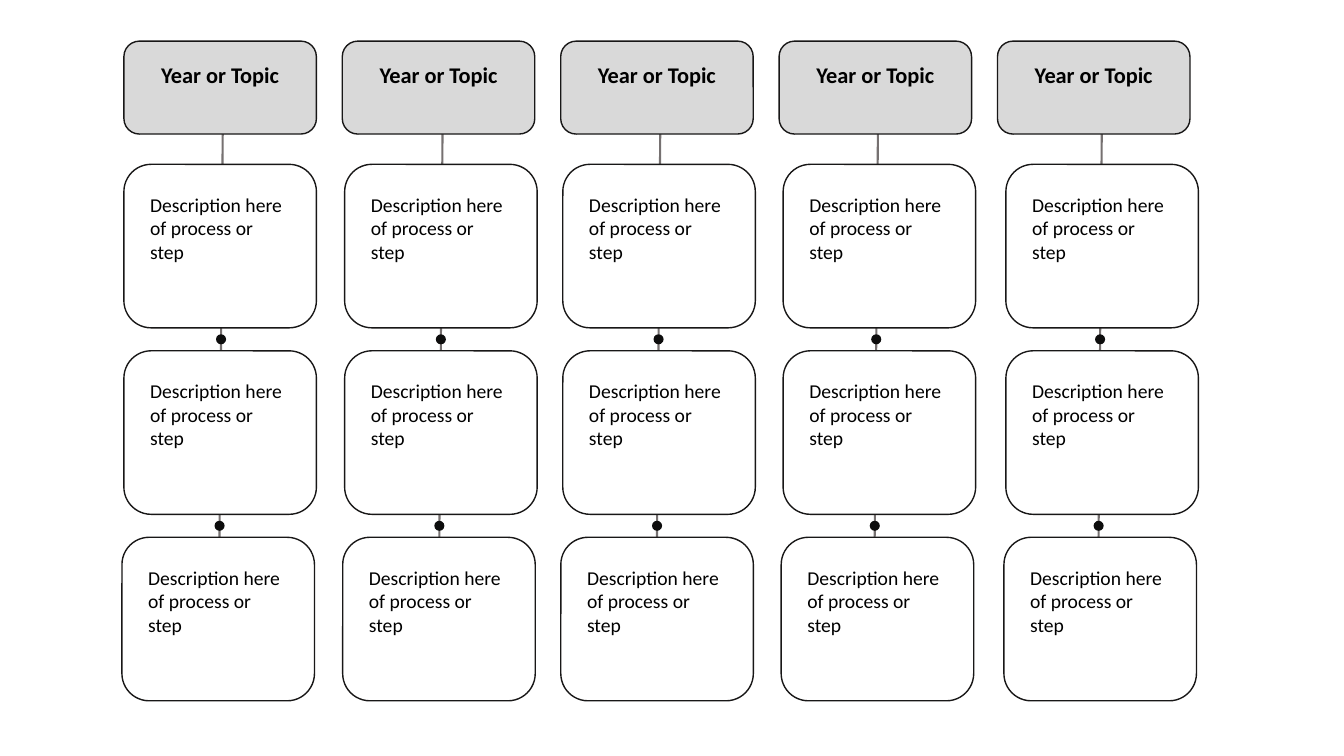
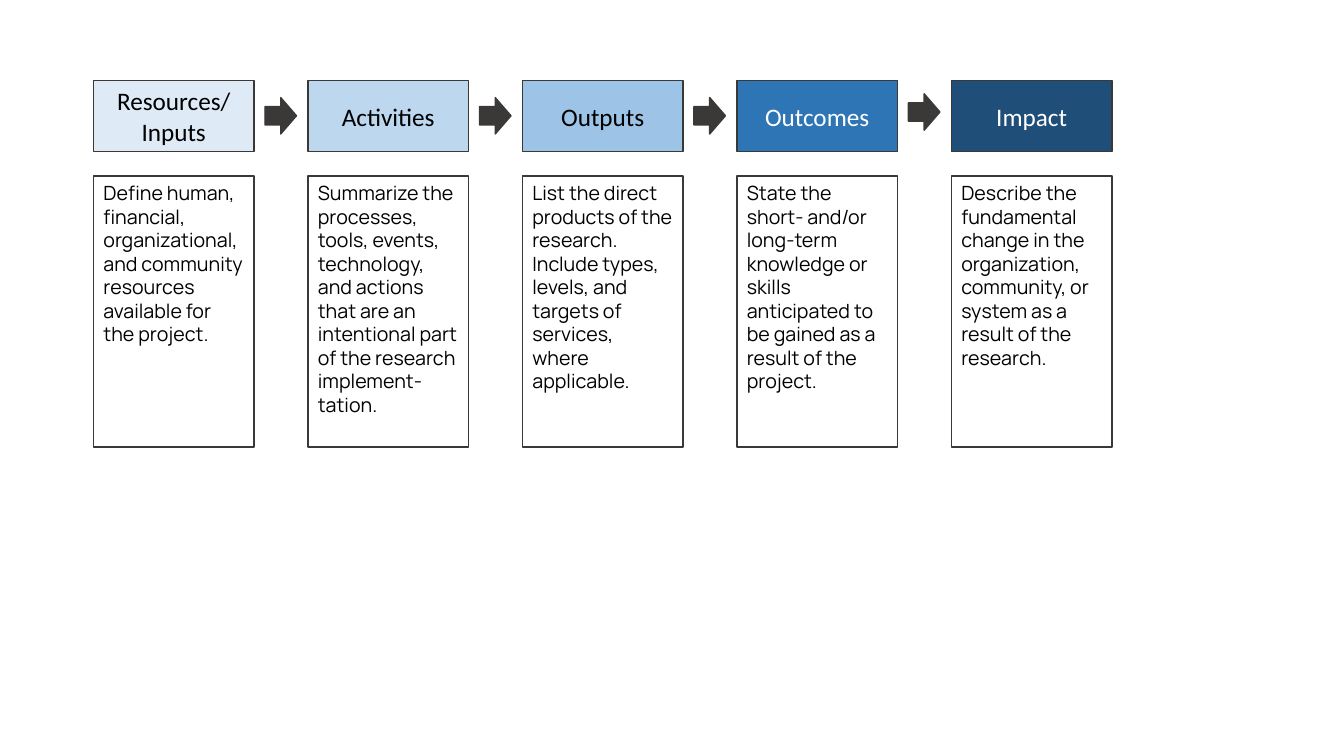
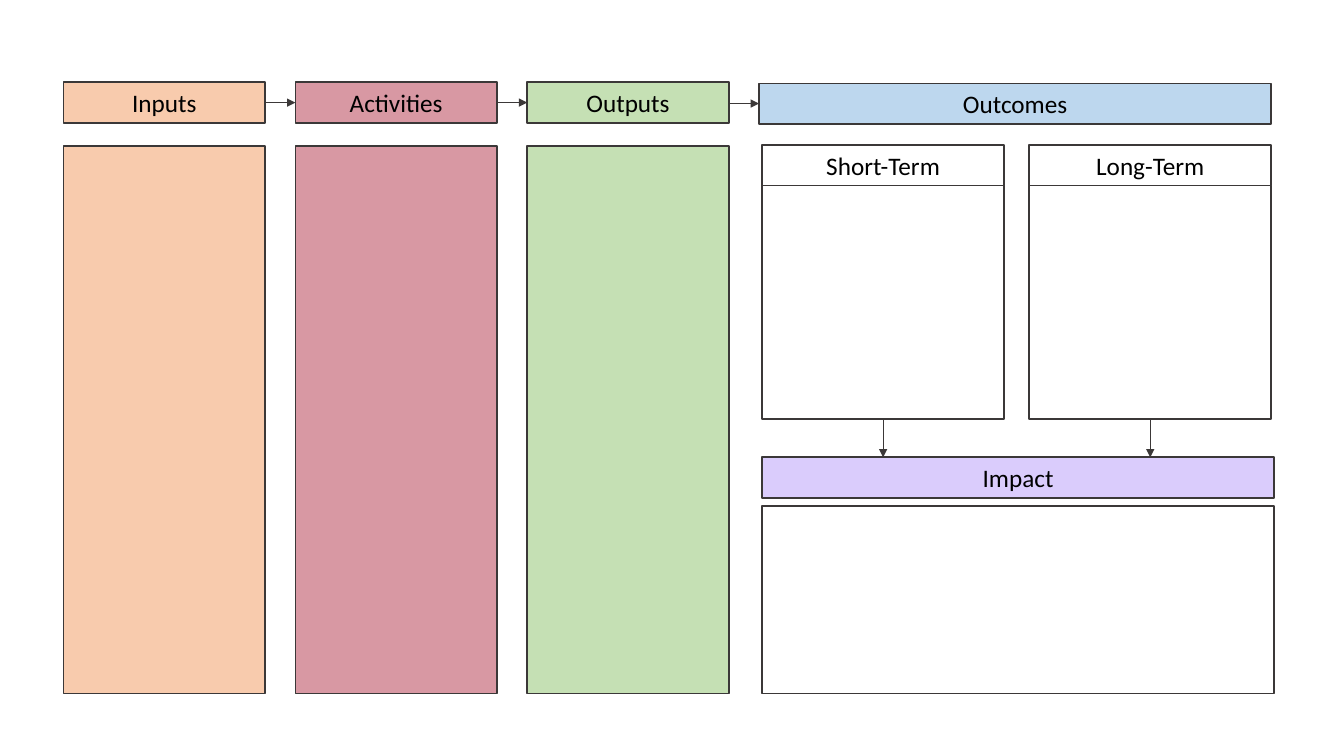
from pptx import Presentation
from pptx.dml.color import RGBColor
from pptx.enum.shapes import MSO_CONNECTOR, MSO_SHAPE
from pptx.enum.text import MSO_ANCHOR, PP_ALIGN
from pptx.oxml.ns import qn
from pptx.util import Pt
from lxml.etree import SubElement

HEX = {
    "black": "000000", "white": "FFFFFF", "ink": "181717", "dark": "3B3838",
    "dot": "0D0D0D", "stem": "767171", "gray": "D9D9D9",
    "ice": "DEEBF7", "sky": "BDD7EE", "blue": "9DC3E6",
    "deep": "2E75B6", "navy": "1F4E79",
    "peach": "F8CBAD", "rose": "D898A3", "green": "C5E0B4", "lilac": "DACCFC",
}

TOPIC = "Year or Topic"
STEP = "Description here of process or step"
TRACKS = [(88.5, 159.1), (246.2, 316.1), (402, 471.6), (559.4, 627.1), (718.5, 787)]
ROWS = [(117.4, 0), (250.6, 0), (383.8, -1.4)]

STAGES = [
    ("Resources/\nInputs", "ice", "black",
     "Define human, financial, organizational, and community resources available for the project."),
    ("Activities", "sky", "black",
     "Summarize the processes, tools, events, technology, and actions that are an "
     "intentional part of the research implement-tation."),
    ("Outputs", "blue", "black",
     "List the direct products of the research. Include types, levels, and targets of "
     "services, where applicable."),
    ("Outcomes", "deep", "white",
     "State the short- and/or long-term knowledge or skills anticipated to be gained "
     "as a result of the project."),
    ("Impact", "navy", "white",
     "Describe the fundamental change in the organization, community, or system as a "
     "result of the research."),
]

LANES = [("Inputs", "peach"), ("Activities", "rose"), ("Outputs", "green")]
TERMS = ["Short-Term", "Long-Term"]


def rgb(name):
    return RGBColor.from_string(HEX[name])


def box(slide, kind, x, y, w, h, fill=None, line=None, width=1):
    shape = slide.shapes.add_shape(kind, Pt(x), Pt(y), Pt(w), Pt(h))
    shape.shadow.inherit = False
    if fill:
        shape.fill.solid()
        shape.fill.fore_color.rgb = rgb(fill)
    else:
        shape.fill.background()
    if line:
        shape.line.color.rgb = rgb(line)
        shape.line.width = Pt(width)
    else:
        shape.line.fill.background()
    return shape


def write(shape, text, size, color="black", font="Calibri", bold=False,
          align=PP_ALIGN.CENTER, anchor=MSO_ANCHOR.MIDDLE, pad=(7.2, 3.6, 7.2, 3.6)):
    frame = shape.text_frame
    frame.word_wrap = True
    frame.vertical_anchor = anchor
    frame.margin_left, frame.margin_top, frame.margin_right, frame.margin_bottom = map(Pt, pad)
    frame.text = text
    for para in frame.paragraphs:
        para.alignment = align
        para.font.name = font
        para.font.size = Pt(size)
        para.font.bold = bold
        para.font.color.rgb = rgb(color)


def link(slide, x1, y1, x2, y2, color, width, head=False):
    line = slide.shapes.add_connector(MSO_CONNECTOR.STRAIGHT, Pt(x1), Pt(y1), Pt(x2), Pt(y2))
    line.line.color.rgb = rgb(color)
    line.line.width = Pt(width)
    if head:
        SubElement(line.line._get_or_add_ln(), qn("a:tailEnd"), type="triangle")
    SubElement(line._element.spPr, qn("a:effectLst"))


def draw_tracks(slide):
    wide, tall, top, end, lean, dot = 137.5, 116.8, 95.8, 458, 2.9, 7.2
    for i, (left, stem) in enumerate(TRACKS):
        link(slide, stem, top, stem - lean, end, "stem", 1.5)
        for (y, _), (below, _) in zip(ROWS, ROWS[1:]):
            mid = (y + tall + below) / 2
            x = stem - lean * (mid - top) / (end - top)
            box(slide, MSO_SHAPE.OVAL, x - dot / 2, mid - dot / 2, dot, dot, "dot")
        head = box(slide, MSO_SHAPE.ROUNDED_RECTANGLE, 88.5 + 156 * i, 29.4, wide, 66.4,
                   "gray", "ink")
        write(head, TOPIC, 16, bold=True, anchor=MSO_ANCHOR.TOP, pad=(7.2, 11.2, 7.2, 3.6))
        for y, shift in ROWS:
            card = box(slide, MSO_SHAPE.ROUNDED_RECTANGLE, left + shift, y, wide, tall,
                       "white", "ink")
            write(card, STEP, 14, align=PP_ALIGN.LEFT, anchor=MSO_ANCHOR.TOP,
                  pad=(13, 14.5, 16, 3.6))


def draw_stages(slide):
    wide, pitch = 114.7, 153.2
    for i, (name, fill, color, note) in enumerate(STAGES):
        x = 66.8 + pitch * i
        head = box(slide, MSO_SHAPE.RECTANGLE, x, 57.3, wide, 51, fill, "dark")
        write(head, name, 18, color)
        body = box(slide, MSO_SHAPE.RECTANGLE, x, 125.8, wide, 193.5, None, "dark")
        write(body, note, 14, font="Manrope", align=PP_ALIGN.LEFT, anchor=MSO_ANCHOR.TOP)
        if i:
            y = 67 if i == len(STAGES) - 1 else 69.7
            box(slide, MSO_SHAPE.RIGHT_ARROW, x - 30.7, y, 22.5, 26, "dark", "dark")


def draw_lanes(slide):
    bar, wide, pitch, edge, end = 29, 144, 165.6, 544.3, 495.4
    full, half, step = 365.8, 173, 190.8

    def pane(x, y, w, h, fill=None, text=None):
        shape = box(slide, MSO_SHAPE.RECTANGLE, x, y, w, h, fill, "dark", 1.25)
        if text:
            write(shape, text, 18)

    for i, (name, fill) in enumerate(LANES):
        x = 45.4 + pitch * i
        y = 74 if i == len(LANES) - 1 else 73.3
        pane(x, 58.8, wide, bar, fill, name)
        pane(x, 104.4, wide, end - 104.4, fill)
        link(slide, x + wide, y, x + pitch, y, "dark", 0.5, True)
    pane(542.2, 59.6, full, bar, "sky", "Outcomes")
    for i, name in enumerate(TERMS):
        x = edge + step * i
        pane(x, 103.6, half, bar, None, name)
        pane(x, 132.6, half, 166.9)
        link(slide, x + half / 2, 299.5, x + half / 2, 326.7, "dark", 0.5, True)
    pane(edge, 326.7, full, bar, "lilac", "Impact")
    pane(edge, 361.3, full, end - 361.3)


def main():
    deck = Presentation()
    deck.slide_width, deck.slide_height = Pt(960), Pt(540)
    for draw in (draw_tracks, draw_stages, draw_lanes):
        draw(deck.slides.add_slide(deck.slide_layouts[6]))
    deck.save("out.pptx")


if __name__ == "__main__":
    main()
